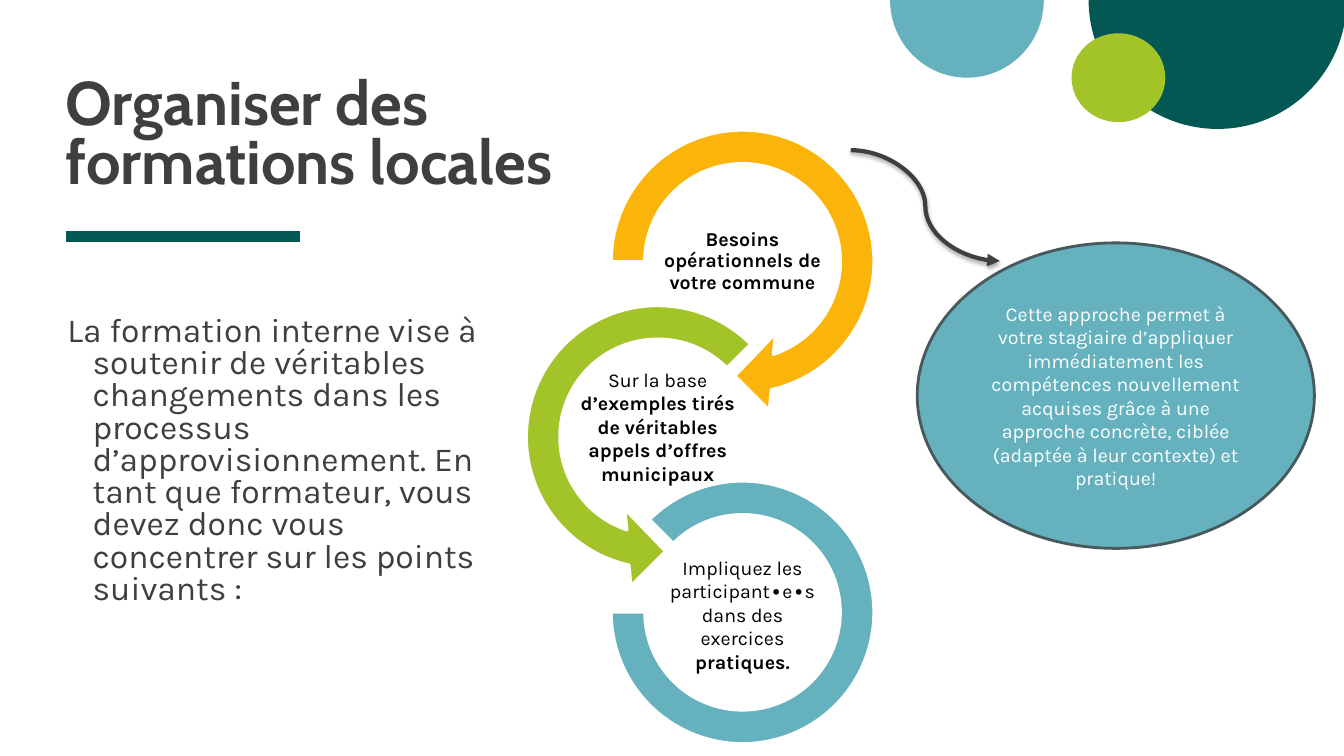
import math

from lxml import etree
from pptx import Presentation
from pptx.dml.color import RGBColor
from pptx.enum.shapes import MSO_CONNECTOR, MSO_SHAPE
from pptx.enum.text import MSO_ANCHOR, PP_ALIGN
from pptx.oxml.ns import qn
from pptx.util import Pt

PIE, OVAL, BLOCK_ARC = MSO_SHAPE.PIE, MSO_SHAPE.OVAL, MSO_SHAPE.BLOCK_ARC
STRAIGHT, CURVE = MSO_CONNECTOR.STRAIGHT, MSO_CONNECTOR.CURVE
TOP, MIDDLE, BOTTOM = MSO_ANCHOR.TOP, MSO_ANCHOR.MIDDLE, MSO_ANCHOR.BOTTOM
LEFT, CENTER = PP_ALIGN.LEFT, PP_ALIGN.CENTER

# Content: each text is a list of (words, bold) runs
TITLE = [("Organiser des formations locales", True)]
BODY = [("La formation interne vise à soutenir de véritables changements dans "
         "les processus d’approvisionnement. En tant que formateur, vous devez "
         "donc vous concentrer sur les points suivants :", False)]
STEPS = [
    {"runs": [("Besoins opérationnels de votre commune", True)],
     "color": "yellow", "spacing": 0.9, "text_shift": 0},
    {"runs": [("Sur la base ", False),
              ("d’exemples tirés de véritables appels d’offres municipaux", True)],
     "color": "green", "spacing": 1.0, "text_shift": -7.6},
    {"runs": [("Impliquez les participant∙e∙s dans des exercices ", False),
              ("pratiques.", True)],
     "color": "blue", "spacing": 1.0, "text_shift": 1.6},
]
BENEFIT = [("Cette approche permet à votre stagiaire d’appliquer immédiatement "
            "les compétences nouvellement acquises grâce à une approche concrète, "
            "ciblée (adaptée à leur contexte) et pratique!", False)]

THEME = {
    "heading_font": "Cabin", "text_font": "Karla",
    "title_size": 44, "body_size": 24, "label_size": 14,
    "teal": "035854", "blue": "65B1BE", "green": "A3C429", "yellow": "FBB50A",
    "dark": "3F3F3F", "black": "000000", "white": "FFFFFF", "outline": "47595C",
}

# Ring geometry in points; the head is relative to the ring centre
RING_X, RING_TOP, RING_STEP = (530.4, 469.8, 530.4), 186.8, 125.3
OUTER, INNER = 93.7, 70
OUTER_END, INNER_END, ARC_CURVES = 437.4, 431.8, 3
HEAD = [(19, 106.2), (-5.4, 81.7), (23.4, 51.8)]
LABEL_WIDTH, LABEL_HEIGHT = 121, 60.5

presentation = Presentation()
presentation.slide_width, presentation.slide_height = Pt(960), Pt(540)
slide = presentation.slides.add_slide(presentation.slide_layouts[6])
shapes = slide.shapes


def color(name):
    return RGBColor.from_string(THEME[name])


def paint(shape, fill, line=None, width=2):
    shape.shadow.inherit = False
    shape.fill.solid()
    shape.fill.fore_color.rgb = color(fill)
    if line:
        shape.line.color.rgb = color(line)
        shape.line.width = Pt(width)
    else:
        shape.line.fill.background()


def add_preset(kind, box, fill, line=None, adjustments=()):
    shape = shapes.add_shape(kind, *map(Pt, box))
    for index, value in enumerate(adjustments):
        shape.adjustments[index] = value
    paint(shape, fill, line)
    return shape


def write(shape, runs, size, ink, font="text_font", align=CENTER, anchor=MIDDLE,
          margins=(0, 0, 0, 0), spacing=1.0):
    frame = shape.text_frame
    frame.word_wrap = True
    frame.vertical_anchor = anchor
    (frame.margin_left, frame.margin_top,
     frame.margin_right, frame.margin_bottom) = map(Pt, margins)
    paragraph = frame.paragraphs[0]
    paragraph.alignment = align
    paragraph.line_spacing = spacing
    paragraph.font.name = THEME[font]
    paragraph.font.size = Pt(THEME[size])
    paragraph.font.color.rgb = color(ink)
    for words, bold in runs:
        run = paragraph.add_run()
        run.text = words
        run.font.bold = bold
    return paragraph


def add_line(kind, ends, ink, width):
    connector = shapes.add_connector(kind, *map(Pt, ends))
    connector.line.color.rgb = color(ink)
    connector.line.width = Pt(width)
    effects = etree.SubElement(connector._element.spPr, qn("a:effectLst"))
    return connector, effects


def angle_adjust(degrees):
    return degrees * 0.6


def arc(radius, start, end):
    """Start point, then two handles and an end point for each curve."""
    sweep = math.radians(end - start) / ARC_CURVES
    handle = 4 / 3 * math.tan(sweep / 4)
    points = [(radius * math.cos(math.radians(start)),
               radius * math.sin(math.radians(start)))]
    for index in range(ARC_CURVES):
        x, y = points[-1]
        angle = math.radians(start) + (index + 1) * sweep
        end_x, end_y = radius * math.cos(angle), radius * math.sin(angle)
        points += [(x - handle * y, y + handle * x),
                   (end_x + handle * end_y, end_y - handle * end_x),
                   (end_x, end_y)]
    return points


def add_ring_arrow(center_x, center_y, start, side, fill):
    """Side 1 turns clockwise; side -1 is its mirror image."""
    outer, inner = arc(OUTER, start, OUTER_END), arc(INNER, INNER_END, start)
    points = [(Pt(center_x + side * x), Pt(center_y + y))
              for x, y in outer + HEAD + inner]
    builder = shapes.build_freeform(*points[0])
    builder.add_line_segments(points[1:], close=True)
    shape = builder.convert_to_shape()
    # Join the handles and end point of each arc piece into one curve
    segments = list(shape._element.iter(qn("a:lnTo")))
    inner_first = len(outer) + len(HEAD)
    for first in (0, inner_first):
        for index in range(first, first + 3 * ARC_CURVES, 3):
            curve = etree.Element(qn("a:cubicBezTo"))
            segments[index].addprevious(curve)
            for segment in segments[index:index + 3]:
                curve.append(segment[0])
                segment.getparent().remove(segment)
    paint(shape, fill, "white")


# Corner circles and title rule
half_circle = [angle_adjust(0), angle_adjust(180)]
add_preset(PIE, (777.6, -92.2, 184.3, 184.3), "teal", adjustments=half_circle)
add_line(STRAIGHT, (46.8, 169.2, 214.6, 169.2), "teal", 8)
add_preset(PIE, (635.8, -55.4, 109.8, 110.9), "blue", adjustments=half_circle)
add_preset(OVAL, (765.4, 23.8, 67, 63.4), "green")

# Title and body
write(shapes.add_textbox(Pt(46.8), Pt(15.1), Pt(418.3), Pt(125.3)), TITLE,
      "title_size", "dark", "heading_font", LEFT, BOTTOM, spacing=0.8)
body = write(shapes.add_textbox(Pt(30.2), Pt(208.1), Pt(314.6), Pt(316.8)), BODY,
             "body_size", "dark", align=LEFT, anchor=TOP,
             margins=(0, 18, 0, 0), spacing=0.8)
body_properties = body._p.get_or_add_pPr()
body_properties.set("marL", str(Pt(36)))
body_properties.set("indent", str(Pt(-18)))

# Chain of rings with their labels
for index, (step, center_x) in enumerate(zip(STEPS, RING_X)):
    center_y = RING_TOP + index * RING_STEP
    if index == len(STEPS) - 1:
        add_preset(BLOCK_ARC, (center_x - OUTER, center_y - OUTER, 2 * OUTER, 2 * OUTER),
                   step["color"], "white",
                   [angle_adjust(225), angle_adjust(180), 0.127])
    else:
        start, side = ((180, 1), (225, -1))[index]
        add_ring_arrow(center_x, center_y, start, side, step["color"])
    label = shapes.add_textbox(
        Pt(center_x - LABEL_WIDTH / 2),
        Pt(center_y + step["text_shift"] - LABEL_HEIGHT / 2),
        Pt(LABEL_WIDTH), Pt(LABEL_HEIGHT))
    write(label, step["runs"], "label_size", "black",
          margins=(0.7, 0.7, 0.7, 0.7), spacing=step["spacing"])

# Curved arrow with a soft shadow
arrow, effects = add_line(CURVE, (607.7, 107.3, 714.2, 186.5), "dark", 3)
etree.SubElement(arrow.line._get_or_add_ln(), qn("a:tailEnd"), type="triangle")
shadow = etree.SubElement(effects, qn("a:outerShdw"), blurRad=str(Pt(3.1)),
                          dist=str(Pt(1.8)), dir="5400000", rotWithShape="0")
shadow_color = etree.SubElement(shadow, qn("a:srgbClr"), val=THEME["black"])
etree.SubElement(shadow_color, qn("a:alpha"), val="35000")

# Benefit bubble
bubble = add_preset(OVAL, (655.2, 173.5, 283.7, 218.2), "blue", "outline")
write(bubble, BENEFIT, "label_size", "white", margins=(7.2, 3.6, 7.2, 3.6))

presentation.save("out.pptx")
